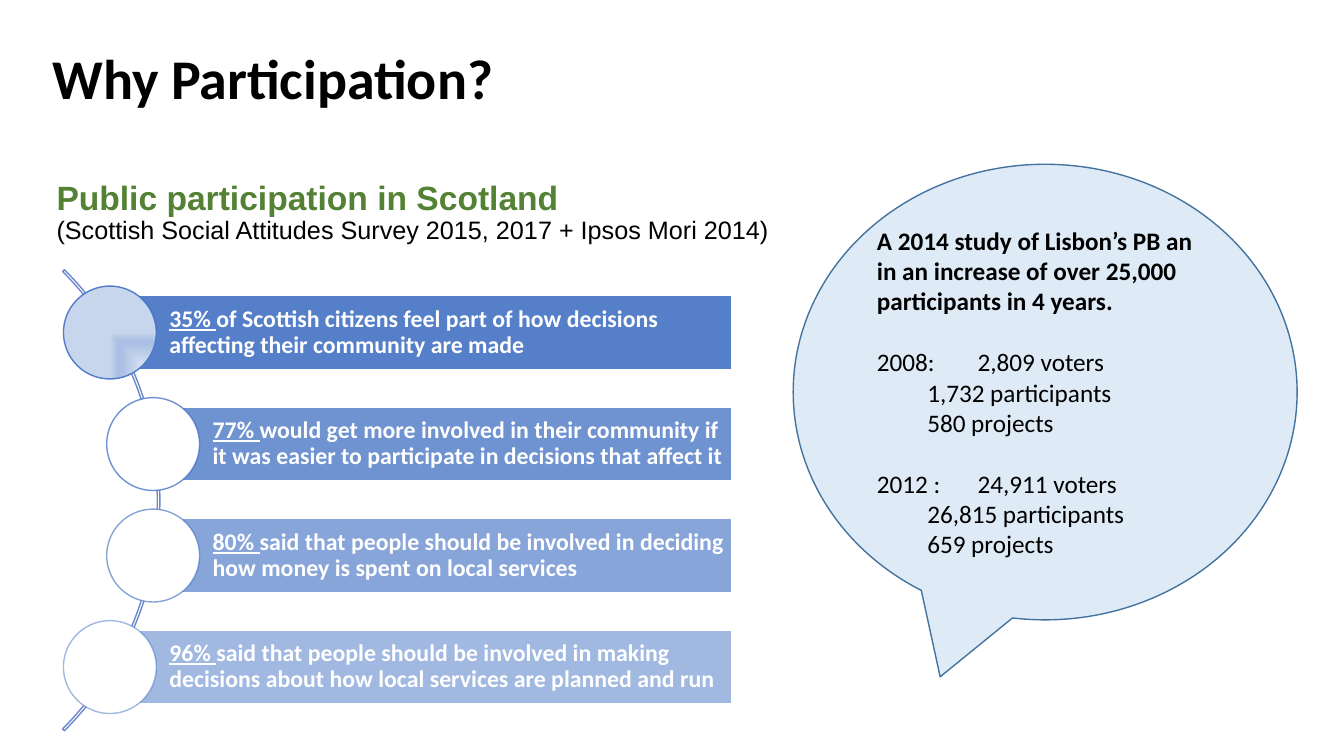
"""Build the slide on public participation in Scotland."""
import pptx
import pptx.dml.color
import pptx.enum.shapes
import pptx.enum.text
import pptx.oxml
import pptx.oxml.ns
import pptx.util

Cm = pptx.util.Cm
Pt = pptx.util.Pt
SHAPE = pptx.enum.shapes.MSO_SHAPE
ANCHOR = pptx.enum.text.MSO_ANCHOR
LEFT = pptx.enum.text.PP_ALIGN.LEFT

COLORS = {
    "black": "000000",
    "white": "FFFFFF",
    "green": "548235",
    "blue": "4472C4",
    "arc": "6D89CB",
    "bubble": "DEEBF7",
    "bubble_line": "43739E",
}
GRADIENT = [(0, "F6F8FC"), (74, "ABC0E4"), (83, "ABC0E4"), (100, "C7D5ED")]

FINDINGS = [
    ("35% ", "of Scottish citizens feel part of how decisions affecting "
             "their community are made", 1.6, 90),
    ("77% ", "would get more involved in their community if it was easier to "
             "participate in decisions that affect it", 2.69, 77),
    ("80% ", "said that people should be involved in deciding how money is "
             "spent on local services", 2.69, 63),
    ("96% ", "said that people should be involved in making decisions about "
             "how local services are planned and run", 1.6, 50),
]
STUDY = ("A 2014 study of Lisbon’s PB an in an increase of over 25,000 "
         "participants in 4 years.")
YEARS = [
    ("2008: ", "2,809 voters", "1,732 participants", "580 projects"),
    ("2012 :", "24,911 voters", "26,815 participants", "659 projects"),
]
BAR_TOP, BAR_HEIGHT, BAR_RIGHT, PITCH, CIRCLE = 7.44, 1.88, 18.44, 2.81, 2.34


def rgb(name):
    return pptx.dml.color.RGBColor.from_string(COLORS[name])


def add_text(p, text, size=18, font="Calibri", color="black", bold=False, underline=False):
    r = p.add_run()
    r.text = text
    r.font.size = Pt(size)
    r.font.name = font
    r.font.bold = bold
    r.font.underline = underline
    r.font.color.rgb = rgb(color)
    return r


def set_alpha(sp, xpath, percent):
    for clr in sp._element.spPr.xpath(xpath):
        alpha = pptx.oxml.parse_xml(
            f'<a:alpha {pptx.oxml.ns.nsdecls("a")} val="{percent * 1000}"/>')
        clr.append(alpha)


def add_shape(s, kind, box, line, width=1, fill=None):
    sp = s.shapes.add_shape(kind, *(Cm(v) for v in box))
    sp.shadow.inherit = False
    if fill:
        sp.fill.solid()
        sp.fill.fore_color.rgb = rgb(fill)
    else:
        sp.fill.background()
    sp.line.color.rgb = rgb(line)
    sp.line.width = Pt(width)
    return sp


def set_corner_gradient(sp):
    stops = "".join(f'<a:gs pos="{pos * 1000}"><a:srgbClr val="{clr}"/></a:gs>'
                    for pos, clr in GRADIENT)
    grad = pptx.oxml.parse_xml(
        f'<a:gradFill {pptx.oxml.ns.nsdecls("a")} rotWithShape="1">'
        f'<a:gsLst>{stops}</a:gsLst><a:path path="rect">'
        '<a:fillToRect l="100000" t="100000"/></a:path></a:gradFill>')
    old = sp._element.spPr.xpath("./a:noFill")[0]
    old.getparent().replace(old, grad)


def add_finding(s, row, share, text, left, alpha):
    top = BAR_TOP + row * PITCH
    bar_left = left + CIRCLE / 2
    bar = add_shape(s, SHAPE.RECTANGLE, (bar_left, top, BAR_RIGHT - bar_left, BAR_HEIGHT),
                    "white", 1.5, "blue")
    set_alpha(bar, "./a:solidFill/a:srgbClr", alpha)
    tf = bar.text_frame
    tf.word_wrap = True
    tf.vertical_anchor = ANCHOR.MIDDLE
    tf.margin_left = Cm(1.5)
    tf.margin_right = tf.margin_top = tf.margin_bottom = Cm(0.12)
    p = tf.paragraphs[0]
    p.alignment = LEFT
    p.line_spacing = 0.9
    add_text(p, share, size=17, color="white", bold=True, underline=True)
    add_text(p, text, size=17, color="white", bold=True)

    circle_top = top + (BAR_HEIGHT - CIRCLE) / 2
    circle = add_shape(s, SHAPE.OVAL, (left, circle_top, CIRCLE, CIRCLE), "blue",
                       fill="white" if row else None)
    if row == 0:
        set_corner_gradient(circle)
    set_alpha(circle, "./a:ln/a:solidFill/a:srgbClr", alpha)


def add_subtitle(s):
    sp = s.shapes.title
    sp.left, sp.top, sp.width, sp.height = Cm(1.17), Cm(4.14), Cm(18.62), Cm(2.46)
    tf = sp.text_frame
    tf.word_wrap = True
    tf.auto_size = pptx.enum.text.MSO_AUTO_SIZE.NONE
    tf.vertical_anchor = ANCHOR.MIDDLE
    p = tf.paragraphs[0]
    p.alignment = LEFT
    p.line_spacing = 0.9
    add_text(p, "Public participation in Scotland", size=24, font="Arial",
             color="green", bold=True)
    p.add_line_break()
    add_text(p, "(Scottish Social Attitudes Survey 2015, 2017 + Ipsos Mori 2014)",
             font="Arial")


def add_heading(s):
    sp = s.shapes.add_textbox(Cm(1.07), Cm(0.97), Cm(19.94), Cm(1.96))
    sp.text_frame.word_wrap = True
    add_text(sp.text_frame.paragraphs[0], "Why Participation?", size=40, bold=True)


def add_bubble(s):
    sp = add_shape(s, SHAPE.OVAL_CALLOUT, (19.99, 4.14, 12.7, 11.48),
                   "bubble_line", fill="bubble")
    tf = sp.text_frame
    tf.word_wrap = True
    tf.vertical_anchor = ANCHOR.MIDDLE
    p = tf.paragraphs[0]
    p.alignment = LEFT
    add_text(p, STUDY, bold=True)
    for year, *figures in YEARS:
        for i, figure in enumerate(figures):
            p = tf.add_paragraph()
            p.alignment = LEFT
            p.space_before = Pt(0 if i else 22)
            add_text(p, f"{'' if i else year}\t{figure}")


def main():
    prs = pptx.Presentation()
    prs.slide_width, prs.slide_height = Cm(33.87), Cm(19.05)
    s = prs.slides.add_slide(prs.slide_layouts[5])
    add_subtitle(s)
    arc = add_shape(s, SHAPE.BLOCK_ARC, (-12.4, 4.39, 16.43, 16.43), "arc")
    for i, value in enumerate((189, 27, 0.004)):
        arc.adjustments[i] = value
    for row, finding in enumerate(FINDINGS):
        add_finding(s, row, *finding)
    add_heading(s)
    add_bubble(s)
    prs.save("out.pptx")


if __name__ == "__main__":
    main()
